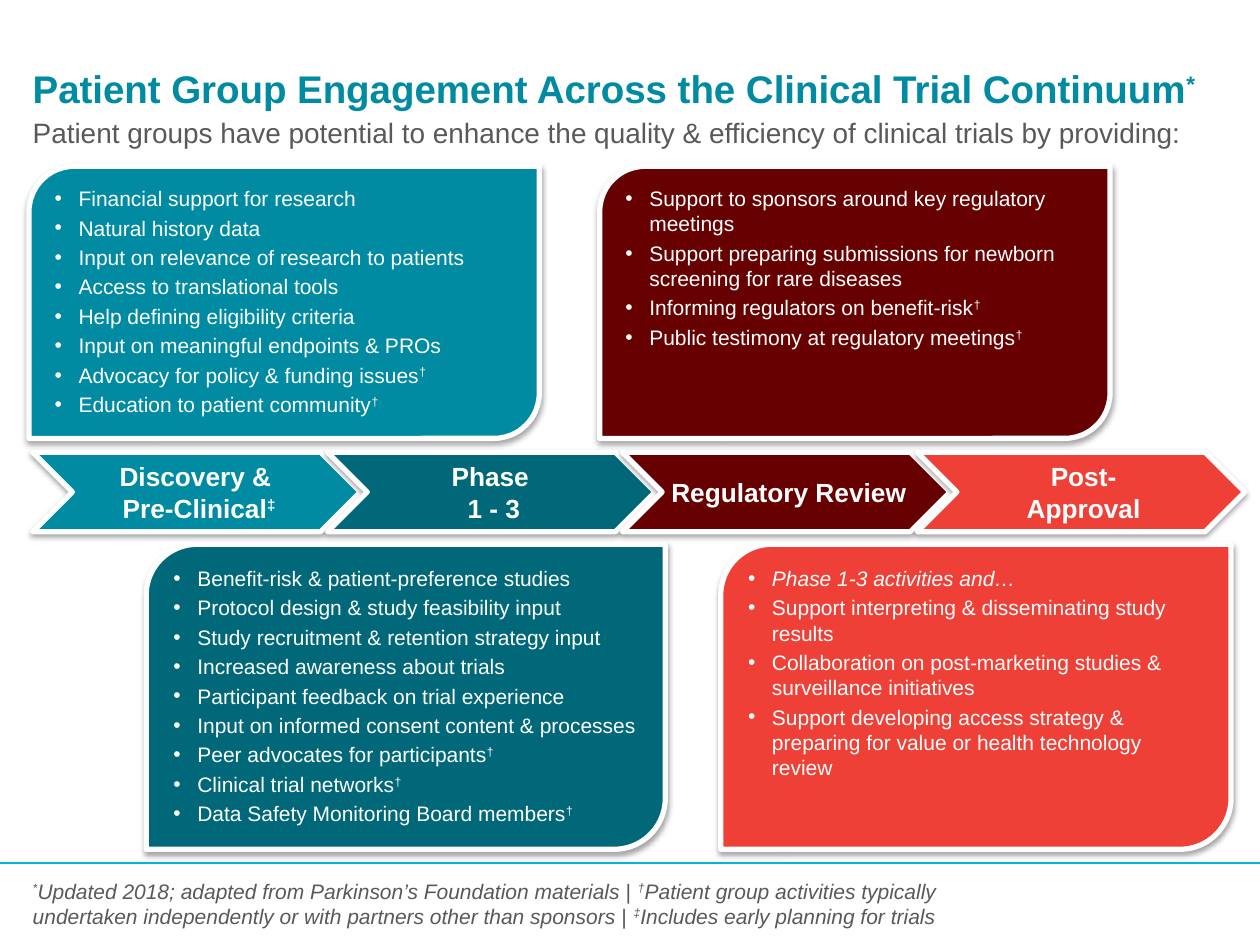
from dataclasses import dataclass
from itertools import groupby
from lxml import etree
from pptx import Presentation
from pptx.dml.color import RGBColor
from pptx.enum.shapes import MSO_CONNECTOR, MSO_SHAPE
from pptx.enum.text import MSO_ANCHOR, PP_ALIGN
from pptx.oxml.ns import qn
from pptx.util import Pt

PX = 9144


@dataclass(frozen=True)
class Theme:
    font: str = "Arial"
    white: str = "FFFFFF"
    gray: str = "58595B"
    rule: str = "00B7D5"
    shadow: str = "000000"
    teal: str = "008BA2"
    deep: str = "006879"
    maroon: str = "670001"
    red: str = "EE4036"
    title: int = 22
    subtitle: int = 16
    stage: int = 15
    body: int = 12


T = Theme()
MARKS = "*†‡"
TITLE = "Patient Group Engagement Across the Clinical Trial Continuum*"
SUBTITLE = "Patient groups have potential to enhance the quality & efficiency of clinical trials by providing:"
FOOTNOTE = (
    "*Updated 2018; adapted from Parkinson’s Foundation materials | "
    "†Patient group activities typically undertaken independently or with partners "
    "other than sponsors | ‡Includes early planning for trials"
)
STAGES = [
    (["Discovery & ", "Pre-Clinical‡"], T.teal),
    (["Phase ", "1 - 3"], T.deep),
    (["Regulatory Review"], T.maroon),
    (["Post-", "Approval"], T.red),
]
ITALIC_ITEM = "Phase 1-3 activities and…"
CARDS = [
    ((23, 132, 405, 216), T.teal, [
        "Financial support for research",
        "Natural history data",
        "Input on relevance of research to patients",
        "Access to translational tools",
        "Help defining eligibility criteria",
        "Input on meaningful endpoints & PROs",
        "Advocacy for policy & funding issues†",
        "Education to patient community†",
    ]),
    ((116, 432, 412, 242), T.deep, [
        "Benefit-risk & patient-preference studies",
        "Protocol design & study feasibility input",
        "Study recruitment & retention strategy input",
        "Increased awareness about trials",
        "Participant feedback on trial experience",
        "Input on informed consent content & processes",
        "Peer advocates for participants†",
        "Clinical trial networks†",
        "Data Safety Monitoring Board members†",
    ]),
    ((572, 432, 405, 242), T.red, [
        ITALIC_ITEM,
        "Support interpreting & disseminating study results",
        "Collaboration on post-marketing studies & surveillance initiatives",
        "Support developing access strategy & preparing for value or health technology review",
    ]),
    ((476, 132, 405, 216), T.maroon, [
        "Support to sponsors around key regulatory meetings",
        "Support preparing submissions for newborn screening for rare diseases",
        "Informing regulators on benefit-risk†",
        "Public testimony at regulatory meetings†",
    ]),
]


def rgb(value):
    return RGBColor.from_string(value)


def emu(box):
    return [v * PX for v in box]


def add_shadow(sp):
    effects = etree.SubElement(sp._element.spPr, qn("a:effectLst"))
    shadow = etree.SubElement(effects, qn("a:outerShdw"), blurRad="40000",
                              dist="23000", dir="5400000", rotWithShape="0")
    color = etree.SubElement(shadow, qn("a:srgbClr"), val=T.shadow)
    etree.SubElement(color, qn("a:alpha"), val="35000")


def add_block(s, kind, box, fill, line=None, shadow=True):
    sp = s.shapes.add_shape(kind, *emu(box))
    sp.fill.solid()
    sp.fill.fore_color.rgb = rgb(fill)
    if line:
        sp.line.color.rgb = rgb(line)
        sp.line.width = Pt(3)
    else:
        sp.line.fill.background()
    if shadow:
        add_shadow(sp)
    else:
        sp.shadow.inherit = False
    return sp


def set_frame(tf, insets, anchor=MSO_ANCHOR.TOP):
    tf.word_wrap = True
    tf.vertical_anchor = anchor
    tf.margin_left, tf.margin_top, tf.margin_right, tf.margin_bottom = emu(insets)


def add_bullet(p):
    pPr = p._p.get_or_add_pPr()
    pPr.set("marL", str(19 * PX))
    pPr.set("indent", str(-19 * PX))
    etree.SubElement(pPr, qn("a:buFont"), typeface=T.font)
    etree.SubElement(pPr, qn("a:buChar"), char="•")


def write(tf, lines, size, color, bold=False, italic=False,
          align=PP_ALIGN.LEFT, bullets=False):
    for i, text in enumerate(lines):
        p = tf.add_paragraph() if i else tf.paragraphs[0]
        p.alignment = align
        if bullets:
            if i:
                p.space_before = Pt(size * 0.2)
            add_bullet(p)
        for is_mark, chars in groupby(text, key=lambda c: c in MARKS):
            r = p.add_run()
            r.text = "".join(chars)
            r.font.name = T.font
            r.font.size = Pt(size)
            r.font.bold = bold
            r.font.italic = italic or text == ITALIC_ITEM
            r.font.color.rgb = rgb(color)
            if is_mark:
                r._r.get_or_add_rPr().set("baseline", "30000")


def add_text(s, box, insets=(0, 0, 0, 0), anchor=MSO_ANCHOR.TOP):
    tf = s.shapes.add_textbox(*emu(box)).text_frame
    set_frame(tf, insets, anchor)
    return tf


def main():
    prs = Presentation()
    prs.slide_width, prs.slide_height = emu((1000, 750))
    s = prs.slides.add_slide(prs.slide_layouts[6])

    add_block(s, MSO_SHAPE.RECTANGLE, (0, 683, 1000, 67), T.white)
    rule = s.shapes.add_connector(MSO_CONNECTOR.STRAIGHT, *emu((0, 685, 1000, 685)))
    rule.line.color.rgb = rgb(T.rule)
    rule.line.width = Pt(0.75)
    etree.SubElement(rule._element.spPr, qn("a:effectLst"))

    for i, (lines, color) in enumerate(STAGES):
        x = 26 + 234 * i
        add_block(s, MSO_SHAPE.CHEVRON, (x, 359, 260, 63), color, T.white)
        tf = add_text(s, (x + 31, 359, 197, 63), (7, 2, 2, 2), MSO_ANCHOR.MIDDLE)
        write(tf, lines, T.stage, T.white, bold=True, align=PP_ALIGN.CENTER)

    write(add_text(s, (26, 52, 974, 60)), [TITLE], T.title, T.teal, bold=True)
    tf = add_text(s, (26, 94, 940, 50))
    write(tf, [SUBTITLE], T.subtitle, T.gray)
    tf.paragraphs[0].line_spacing = 0.95

    for box, color, items in CARDS:
        sp = add_block(s, MSO_SHAPE.ROUND_2_DIAG_RECTANGLE, box, color, T.white)
        set_frame(sp.text_frame, (10, 5, 10, 5))
        write(sp.text_frame, items, T.body, T.white, bullets=True)

    note = add_block(s, MSO_SHAPE.RECTANGLE, (26, 692, 801, 50), T.white, shadow=False)
    set_frame(note.text_frame, (0, 5, 0, 5))
    write(note.text_frame, [FOOTNOTE], T.body, T.gray, italic=True)

    prs.save("out.pptx")


if __name__ == "__main__":
    main()
